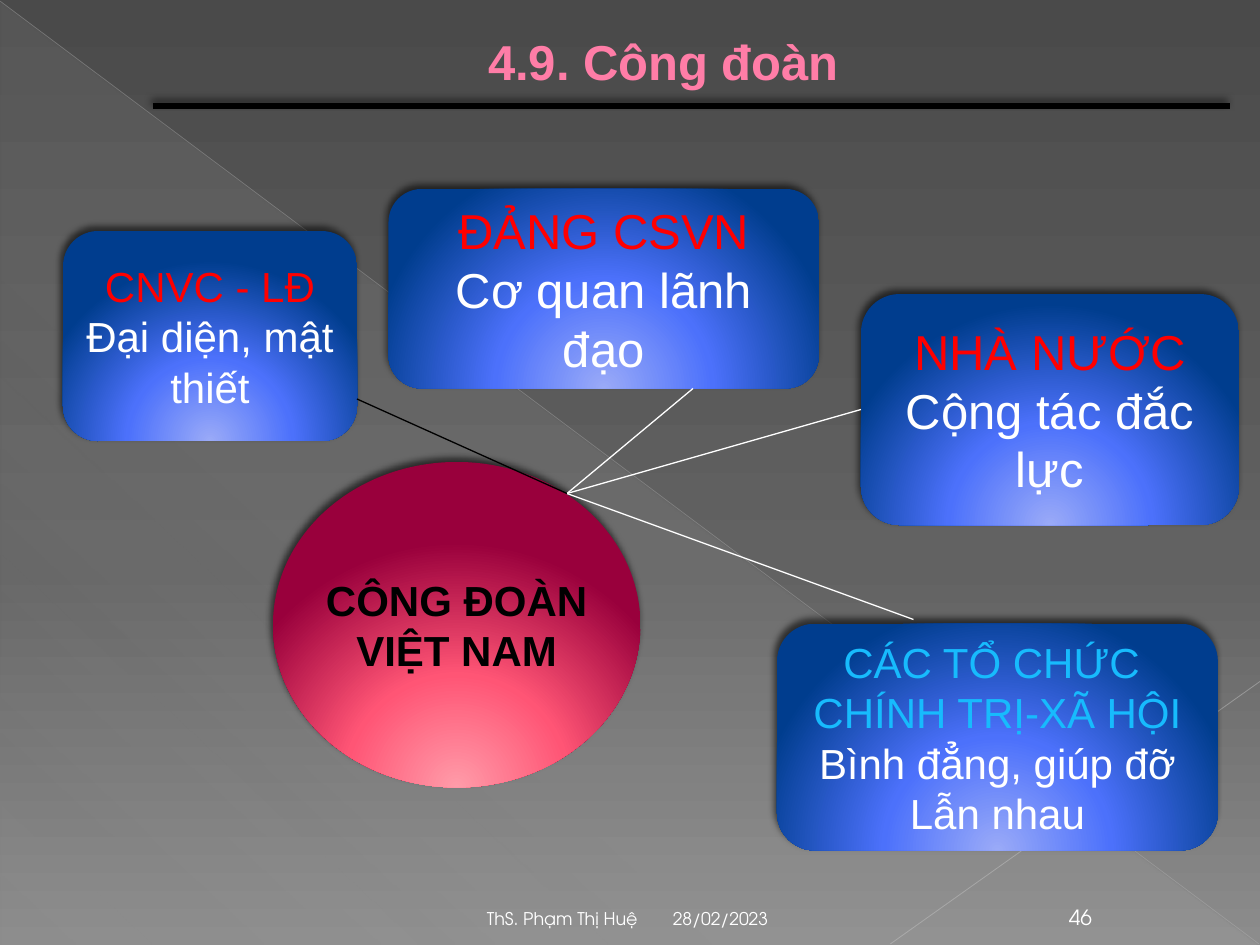
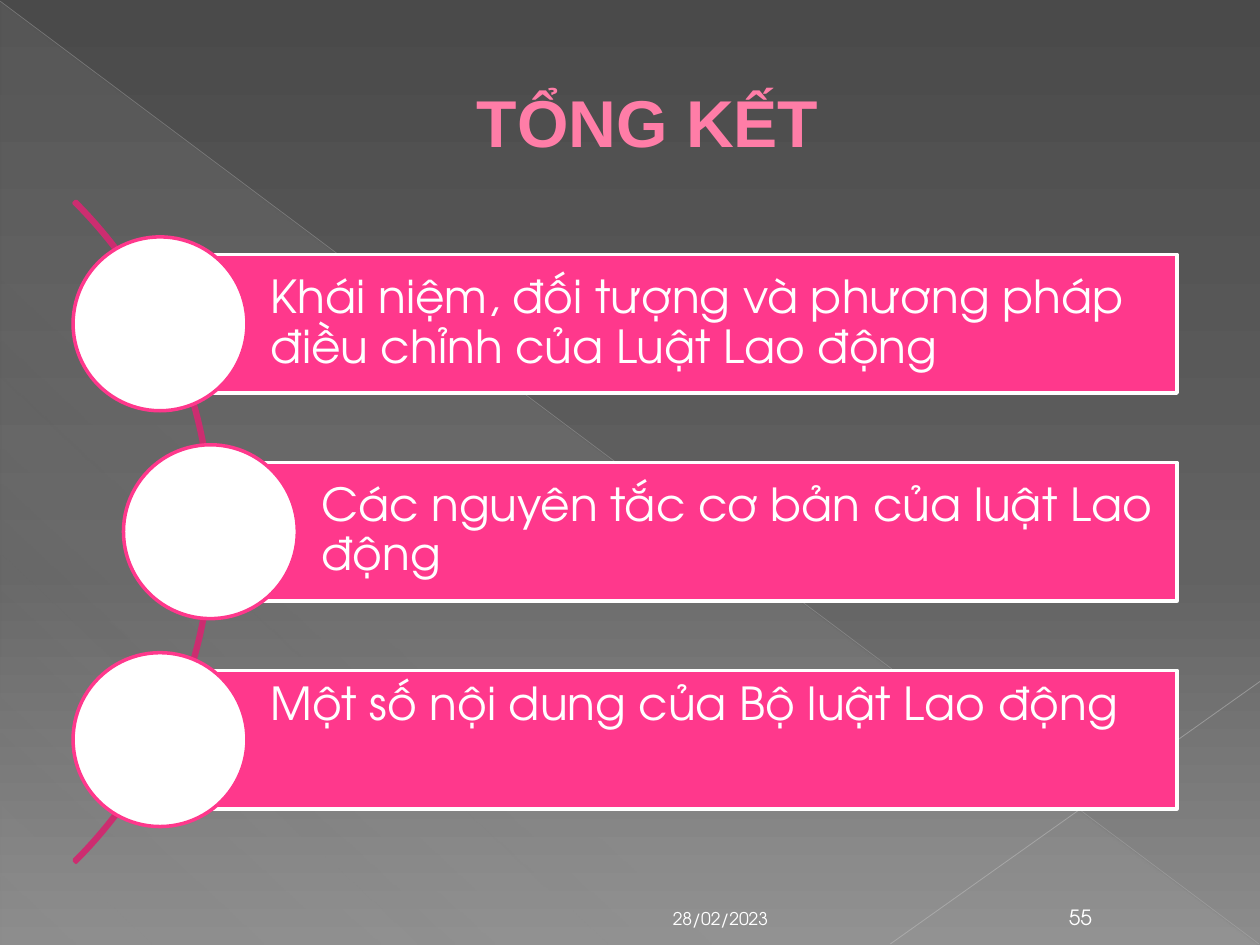
"""Two slides on trade unions and a summary, laid out on a grid of twelfths of an inch."""
from pptx import Presentation, util as u
from pptx.dml.color import RGBColor
from pptx.enum import shapes as s, text as t
from pptx.oxml import parse_xml
from pptx.oxml.ns import nsdecls, qn

COLUMNS, ROWS, CELL = 120, 90, u.Inches(1) / 12
HEAD_FONT, BODY_FONT = "Arial", "TeX Gyre Adventor"
WHITE, BLACK, RED, SKY = "FFFFFF", "000000", "FF0000", "17BBFD"
PINK, ARC_PINK, TITLE_PINK, TITLE_EDGE = "FF388C", "CC2D70", "FF7DA7", "B12761"
BACKDROP = [(0, "4A4A4A", 100), (60, "626262", 100), (100, "8C8C8C", 100)]
VEIL = [(0, "D2D2D2", 10), (70, "D2D2D2", 8), (100, "D2D2D2", 1)]
BLUE_GLOW = [(0, "9AAAF8", 100), (46, "4C71FB", 100), (100, "003D8E", 100)]
RED_GLOW = [(0, "FF9BA9", 100), (46, "FF5575", 100), (100, "99003C", 100)]
VEIL_LINES = [((0, 0.1), (119.9, 89.9), "BFBFBF", 0.39, 35),
              ((120, 64.9), (84.8, 89.9), "C6C6C6", 0.47, 45)]

DATE, AUTHOR = "28/02/2023", "ThS. Phạm Thị Huệ"
UNION = {"title": "4.9. Công đoàn", "title_box": (0, -0.4, 120, 12.4), "title_size": 28,
         "number": "46", "author": AUTHOR}
SUMMARY = {"title": "TỔNG KẾT", "title_box": (6, 6.8, 105, 9.4), "title_size": 37.8,
           "number": "55", "author": None}

CENTRE_BOX = (26, 44, 35, 31)
CENTRE_LINES = [("CÔNG ĐOÀN", BLACK), ("VIỆT NAM", BLACK)]
HUB = (54, 47)
PARTNERS = [
    {"box": (37, 18, 41, 19), "end": (66, 37), "line": WHITE, "size": 28,
     "lines": [("ĐẢNG CSVN", RED), ("Cơ quan lãnh đạo", WHITE)]},
    {"box": (82, 28, 36, 22), "end": (82, 39), "line": WHITE, "size": 28, "side": 1,
     "lines": [("NHÀ NƯỚC", RED), ("Cộng tác đắc lực", WHITE)]},
    {"box": (74, 59.4, 42, 21.6), "end": (87, 59), "line": WHITE, "size": 24,
     "lines": [("CÁC TỔ CHỨC ", SKY), ("CHÍNH TRỊ-XÃ HỘI", SKY),
               ("Bình đẳng, giúp đỡ", WHITE), ("Lẫn nhau", WHITE)]},
    {"box": (6, 22, 28, 20), "end": (34, 38), "line": BLACK, "size": 24,
     "lines": [("CNVC - LĐ", RED), ("Đại diện, mật thiết", WHITE)]},
]

TOPICS = [("Khái niệm, đối tượng và phương pháp điều chỉnh của Luật Lao động", 15.24, 0.07),
          ("Các nguyên tắc cơ bản của luật Lao động", 20.04, 0.07),
          ("Một số nội dung của Bộ luật Lao động", 15.24, 0.6)]
BAR_TOP, BAR_PITCH, BAR_HEIGHT, BAR_RIGHT, DISC = 24.24, 19.8, 13.2, 112.1, 16.56
ARC_BOX = (-68.76, 6.12, 89.04, 89.04)


def cells(*values):
    return [u.Emu(round(value * CELL)) for value in values]


def colour(value):
    return RGBColor.from_string(value)


def gradient(fill, parent, stops, angle=None):
    """Fill with any number of stops, linear at an angle or glowing from below."""
    fill.gradient()
    marks = "".join(f'<a:gs pos="{place * 1000}"><a:srgbClr val="{tone}"><a:alpha val="{alpha * 1000}"/>'
                    f'</a:srgbClr></a:gs>' for place, tone, alpha in stops)
    if angle is None:
        course = '<a:path path="circle"><a:fillToRect l="50000" t="155000" r="50000" b="-55000"/></a:path>'
    else:
        course = f'<a:lin ang="{angle * 60000}" scaled="0"/>'
    plain = next(parent.iter(qn("a:gradFill")))
    plain.getparent().replace(plain, parse_xml(
        f'<a:gradFill {nsdecls("a")} rotWithShape="1"><a:gsLst>{marks}</a:gsLst>{course}</a:gradFill>'))


def set_effects(properties, shadow):
    for effects in properties.findall(qn("a:effectLst")):
        properties.remove(effects)
    cast = ('<a:outerShdw blurRad="50800" dist="38100" dir="14700000" rotWithShape="0">'
            '<a:srgbClr val="000000"><a:alpha val="60000"/></a:srgbClr></a:outerShdw>') if shadow else ""
    properties.append(parse_xml(f'<a:effectLst {nsdecls("a")}>{cast}</a:effectLst>'))


def add_shape(slide, kind, box, fill=None, line=None, glow=None, angle=None, shadow=False):
    shape = slide.shapes.add_shape(kind, *cells(*box))
    if glow:
        gradient(shape.fill, shape._element.spPr, glow, angle)
    elif fill:
        shape.fill.solid()
        shape.fill.fore_color.rgb = colour(fill)
    else:
        shape.fill.background()
    if line:
        shape.line.color.rgb = colour(line)
        shape.line.width = u.Pt(2)
    else:
        shape.line.fill.background()
    set_effects(shape._element.spPr, shadow)
    return shape


def add_line(slide, start, end, tone, width, alpha=100, shadow=False):
    line = slide.shapes.add_connector(s.MSO_CONNECTOR.STRAIGHT, *cells(*start, *end))
    line.line.color.rgb = colour(tone)
    line.line.width = u.Pt(width)
    if alpha < 100:
        tint = next(line._element.spPr.iter(qn("a:srgbClr")))
        tint.append(parse_xml(f'<a:alpha {nsdecls("a")} val="{alpha * 1000}"/>'))
    set_effects(line._element.spPr, shadow)
    return line


def write(shape, lines, size, font=HEAD_FONT, align="CENTER", anchor="MIDDLE", bold=False, wrap=True):
    frame = shape.text_frame
    frame.word_wrap = wrap
    frame.vertical_anchor = t.MSO_ANCHOR[anchor]
    for index, (words, tone) in enumerate(lines):
        paragraph = frame.add_paragraph() if index else frame.paragraphs[0]
        paragraph.alignment = t.PP_ALIGN[align]
        run = paragraph.add_run()
        run.text = words
        run.font.name, run.font.size, run.font.bold = font, u.Pt(size), bold
        run.font.color.rgb = colour(tone)
    return frame


def add_text(slide, box, words, size, tone=WHITE, **style):
    return write(slide.shapes.add_textbox(*cells(*box)), [(words, tone)], size, **style)


def add_base(presentation, content):
    """Add a slide with the shared backdrop, title and footer."""
    slide = presentation.slides.add_slide(presentation.slide_layouts[6])
    gradient(slide.background.fill, slide._element, BACKDROP, 90)
    add_shape(slide, s.MSO_SHAPE.RIGHT_TRIANGLE, (0.1, 0.2, 119.8, 89.8), glow=VEIL, angle=133)
    for start, end, tone, width, alpha in VEIL_LINES:
        add_line(slide, start, end, tone, width, alpha)
    title = add_text(slide, content["title_box"], content["title"], content["title_size"],
                     TITLE_PINK, bold=True).paragraphs[0]
    title._p.get_or_add_pPr().set("marL", str(u.Inches(0.53)))
    title.runs[0]._r.get_or_add_rPr().insert(0, parse_xml(
        f'<a:ln {nsdecls("a")} w="6350"><a:solidFill><a:srgbClr val="{TITLE_EDGE}"/></a:solidFill></a:ln>'))
    footers = [(62.9, 28, DATE, 10, "LEFT"), (6, 55.9, content["author"], 10, "RIGHT"),
               (99.6, 6.6, content["number"], 12, "CENTER")]
    for left, width, words, size, align in footers:
        if words:
            add_text(slide, (left, 85.1, width, 4), words, size,
                     font=BODY_FONT, align=align, anchor="BOTTOM")
    return slide


def build_union(presentation):
    slide = add_base(presentation, UNION)
    add_line(slide, (14.6, 10.1), (117.1, 10.1), BLACK, 3, shadow=True)
    centre = add_shape(slide, s.MSO_SHAPE.OVAL, CENTRE_BOX, glow=RED_GLOW, shadow=True)
    write(centre, CENTRE_LINES, 24, bold=True, wrap=False)
    for partner in PARTNERS:
        box = add_shape(slide, s.MSO_SHAPE.ROUNDED_RECTANGLE, partner["box"], glow=BLUE_GLOW, shadow=True)
        write(box, partner["lines"], partner["size"])
        link = add_line(slide, HUB, partner["end"], partner["line"], 0.75)
        if "side" in partner:
            link.end_connect(box, partner["side"])


def build_summary(presentation):
    slide = add_base(presentation, SUMMARY)
    arc = add_shape(slide, s.MSO_SHAPE.BLOCK_ARC, ARC_BOX, line=ARC_PINK)
    for index, value in enumerate((189, 27, 0.003)):
        arc.adjustments[index] = value
    for row, (words, left, bottom_inset) in enumerate(TOPICS):
        top = BAR_TOP + row * BAR_PITCH
        bar = add_shape(slide, s.MSO_SHAPE.RECTANGLE, (left, top, BAR_RIGHT - left, BAR_HEIGHT), PINK, WHITE)
        frame = write(bar, [(words, WHITE)], 26, font=BODY_FONT, align="LEFT")
        frame.margin_left, frame.margin_bottom = u.Inches(0.88), u.Inches(bottom_inset)
        frame.margin_top = frame.margin_right = u.Inches(0.07)
        frame.paragraphs[0].line_spacing = 0.9
        disc_top = top + (BAR_HEIGHT - DISC) / 2
        add_shape(slide, s.MSO_SHAPE.OVAL, (left - DISC / 2, disc_top, DISC, DISC), WHITE, PINK)


def main():
    presentation = Presentation()
    presentation.slide_width, presentation.slide_height = cells(COLUMNS, ROWS)
    build_union(presentation)
    build_summary(presentation)
    presentation.save("out.pptx")


if __name__ == "__main__":
    main()
